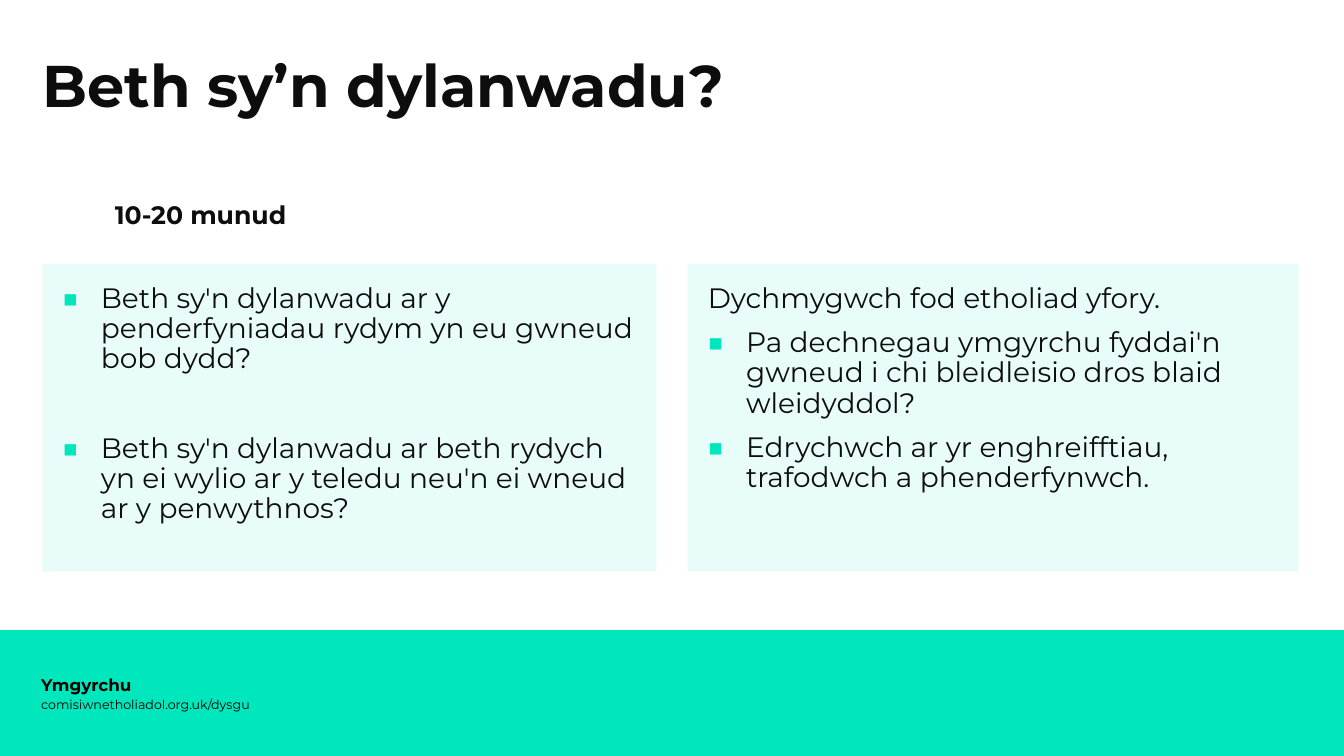
from lxml import etree
from pptx import Presentation
from pptx.dml.color import RGBColor
from pptx.enum.shapes import MSO_SHAPE as SHAPE
from pptx.enum.text import MSO_ANCHOR as ANCHOR, PP_ALIGN as ALIGN
from pptx.oxml.ns import qn
from pptx.util import Inches, Pt

FONT = "Montserrat"
TEAL, INK, BLACK = "00E7BD", "0D0D0D", "000000"


def rgb(color):
    return RGBColor.from_string(color)


def write(tf, text, size=20, color=INK, bold=False, line=0.9, before=0, bullet=False):
    p = tf.paragraphs[0]
    if p.runs:
        p = tf.add_paragraph()
    if bullet:
        pPr = p._p.get_or_add_pPr()
        pPr.set("marL", str(Inches(0.38)))
        pPr.set("indent", str(-Inches(0.38)))
        bu_color = etree.SubElement(pPr, qn("a:buClr"))
        etree.SubElement(bu_color, qn("a:srgbClr"), val=TEAL)
        etree.SubElement(pPr, qn("a:buSzPct"), val="140000")
        etree.SubElement(pPr, qn("a:buFont"), typeface=FONT)
        etree.SubElement(pPr, qn("a:buChar"), char="▪")
    p.alignment = ALIGN.LEFT
    p.line_spacing = line
    p.space_before = Pt(before)
    r = p.add_run()
    r.text = text
    r.font.name, r.font.size, r.font.bold = FONT, Pt(size), bold
    r.font.color.rgb = rgb(color)


prs = Presentation()
prs.slide_width, prs.slide_height = Inches(13.33), Inches(7.5)
s = prs.slides.add_slide(prs.slide_layouts[5])

band_h = prs.slide_height // 6
band = s.shapes.add_shape(SHAPE.RECTANGLE, 0, prs.slide_height - band_h, prs.slide_width, band_h)
band.shadow.inherit = False
band.fill.solid()
band.fill.fore_color.rgb = rgb(TEAL)
band.line.fill.background()

title = s.shapes.title
title.left, title.top, title.width, title.height = map(Inches, (0.32, 0.51, 8.41, 1.2))
title.text_frame.word_wrap = True
title.text_frame.vertical_anchor = ANCHOR.TOP
write(title.text_frame, "Beth sy’n dylanwadu?", size=42, bold=True)

labels = [
    ("10-20 munud", (1.04, 1.99, 6.19, 0.35), ANCHOR.TOP,
     dict(size=18, bold=True, line=0.8)),
    ("Ymgyrchu", (0.31, 6.59, 7.65, 0.4), ANCHOR.MIDDLE,
     dict(size=12, color=BLACK, bold=True, line=1.0)),
    ("comisiwnetholiadol.org.uk/dysgu", (0.31, 6.79, 7.65, 0.4), ANCHOR.MIDDLE,
     dict(size=9, color=BLACK, line=1.0)),
]
for text, box, anchor, style in labels:
    tf = s.shapes.add_textbox(*map(Inches, box)).text_frame
    tf.word_wrap = True
    tf.vertical_anchor = anchor
    write(tf, text, **style)

panels = [
    (0.42, 6.09, [
        ("Beth sy'n dylanwadu ar y penderfyniadau rydym yn eu gwneud bob dydd?", True, 0),
        ("Beth sy'n dylanwadu ar beth rydych yn ei wylio ar y teledu neu'n ei wneud "
         "ar y penwythnos?", True, 42),
    ]),
    (6.82, 6.06, [
        ("Dychmygwch fod etholiad yfory.", False, 0),
        ("Pa dechnegau ymgyrchu fyddai'n gwneud i chi bleidleisio dros blaid wleidyddol?",
         True, 10),
        ("Edrychwch ar yr enghreifftiau, trafodwch a phenderfynwch.", True, 10),
    ]),
]
for left, width, paragraphs in panels:
    sp = s.shapes.add_shape(SHAPE.RECTANGLE, *map(Inches, (left, 2.62, width, 3.05)))
    sp.shadow.inherit = False
    sp.fill.solid()
    sp.fill.fore_color.rgb = rgb(TEAL)
    fill_color = sp._element.spPr.find(qn("a:solidFill")).find(qn("a:srgbClr"))
    etree.SubElement(fill_color, qn("a:alpha"), val="9000")
    sp.line.fill.background()
    tf = sp.text_frame
    tf.word_wrap = True
    tf.vertical_anchor = ANCHOR.TOP
    tf.margin_left = tf.margin_top = tf.margin_right = tf.margin_bottom = Inches(0.2)
    for text, bullet, before in paragraphs:
        write(tf, text, bullet=bullet, before=before)

prs.save("out.pptx")
